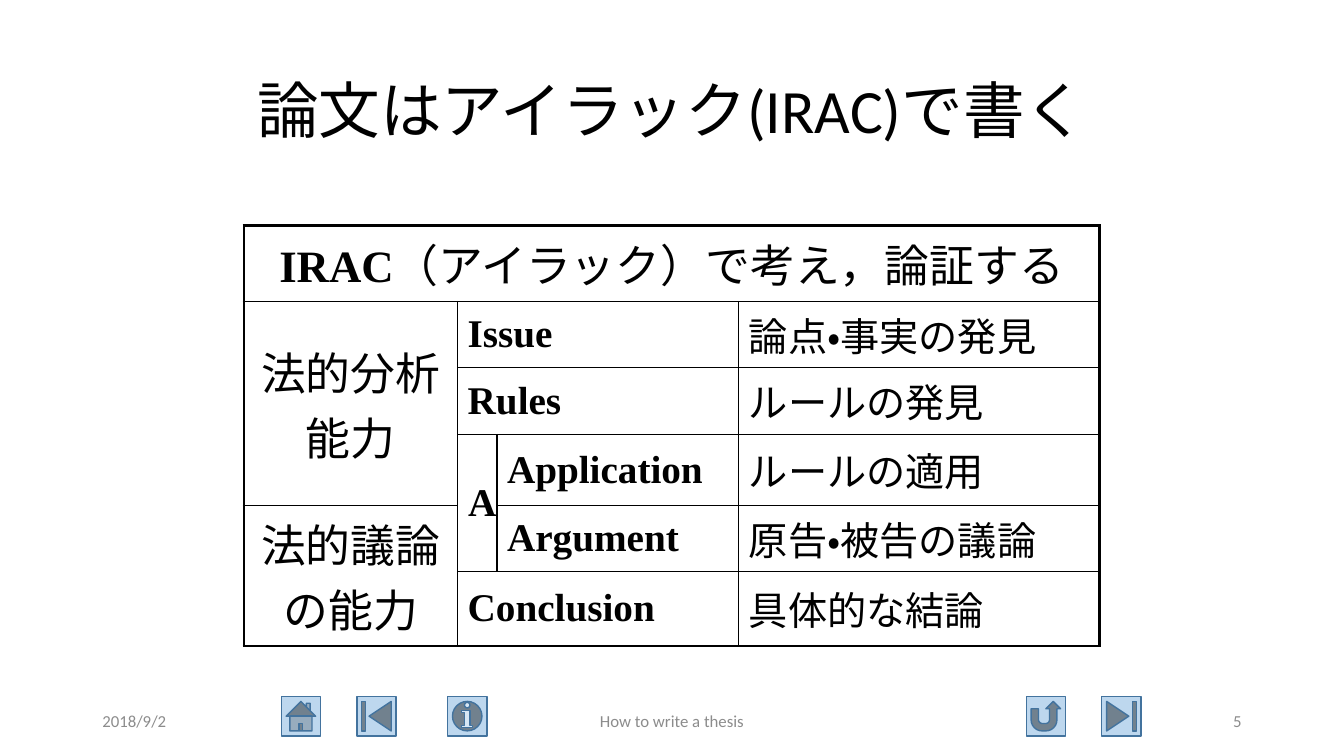
from pptx import Presentation
from pptx.dml.color import RGBColor
from pptx.enum import dml, lang, shapes, text
from pptx.oxml import parse_xml
from pptx.oxml.ns import nsdecls
from pptx.util import Pt

TITLE = "論文はアイラック(IRAC)で書く"
SERIF, SANS, HEADING = "Times New Roman", "Lato", "Calibri"
LEFT, CENTER, RIGHT = text.PP_ALIGN.LEFT, text.PP_ALIGN.CENTER, text.PP_ALIGN.RIGHT

BUTTONS = [
    ("HOME", 200.9),
    ("BEGINNING", 254.9),
    ("RETURN", 733),
    ("END", 787),
    ("INFORMATION", 319.7),
]
FOOTERS = [
    ("2018/9/2", 66, 216, LEFT),
    ("How to write a thesis", 318, 324, CENTER),
    ("5", 678, 216, RIGHT),
]

COLUMNS = [152.6, 28.1, 172.8, 257.8]
ROWS = [54.3, 47.1, 47.9, 50.7, 47.1, 53.5]
CELLS = [
    (0, 0, 1, 4, [("IRAC", SERIF), ("（アイラック）で考え，論証する", SANS)], 32, CENTER),
    (1, 0, 3, 1, [("法的分析能力", SANS)], 32, CENTER),
    (4, 0, 2, 1, [("法的議論の能力", SANS)], 32, CENTER),
    (1, 1, 1, 2, [("Issue", SERIF)], 28, LEFT),
    (2, 1, 1, 2, [("Rules", SERIF)], 28, LEFT),
    (3, 1, 2, 1, [("A", SERIF)], 28, CENTER),
    (3, 2, 1, 1, [("Application", SERIF)], 28, LEFT),
    (4, 2, 1, 1, [("Argument", SERIF)], 28, LEFT),
    (5, 1, 1, 2, [("Conclusion", SERIF)], 28, LEFT),
]
MEANINGS = ["論点・事実の発見", "ルールの発見", "ルールの適用", "原告・被告の議論", "具体的な結論"]
CELLS += [(row, 3, 1, 1, [(meaning, SANS)], 28, LEFT) for row, meaning in enumerate(MEANINGS, 1)]


def color(value):
    return RGBColor.from_string(value)


def style(font, size, value):
    font.size = Pt(size)
    font.color.rgb = color(value)


def add_border(cell, side, width):
    cell._tc.get_or_add_tcPr().append(parse_xml(
        f'<a:{side} {nsdecls("a")} w="{Pt(width)}"><a:solidFill>'
        f'<a:srgbClr val="000000"/></a:solidFill></a:{side}>'))


def add_buttons(slide):
    for kind, left in BUTTONS:
        preset = getattr(shapes.MSO_SHAPE, f"ACTION_BUTTON_{kind}")
        button = slide.shapes.add_shape(preset, Pt(left), Pt(497.5), Pt(28.1), Pt(28.1))
        button.shadow.inherit = False
        button.fill.solid()
        button.fill.fore_color.rgb = color("BDD7EE")
        button.line.color.rgb = color("43739E")
        button.line.width = Pt(1)


def add_footers(slide):
    for words, left, width, align in FOOTERS:
        frame = slide.shapes.add_textbox(Pt(left), Pt(500.5), Pt(width), Pt(28.8)).text_frame
        frame.word_wrap = True
        frame.vertical_anchor = text.MSO_ANCHOR.MIDDLE
        footer = frame.paragraphs[0]
        footer.text = words
        footer.alignment = align
        footer.font.name = HEADING
        style(footer.font, 12, "8C8C8C")


def format_title(title):
    title.left, title.top, title.width, title.height = Pt(66), Pt(28.8), Pt(828), Pt(104.4)
    title.text_frame.vertical_anchor = text.MSO_ANCHOR.MIDDLE
    heading = title.text_frame.paragraphs[0]
    heading.text = TITLE
    heading.alignment = CENTER
    heading.line_spacing = 0.9
    heading.font.name = HEADING
    style(heading.font, 44, "000000")
    heading.runs[0].font.language_id = lang.MSO_LANGUAGE_ID.JAPANESE


def fill_cell(table, row, column, height, width, parts, size, align):
    cell = table.cell(row, column)
    if height * width > 1:
        cell.merge(table.cell(row + height - 1, column + width - 1))
    cell.vertical_anchor = text.MSO_ANCHOR.MIDDLE
    if sum(COLUMNS[column:column + width]) < 30:
        cell.margin_right = 0
    paragraph = cell.text_frame.paragraphs[0]
    paragraph.alignment = align
    style(paragraph.font, size, "000000")
    for words, face in parts:
        run = paragraph.add_run()
        run.text = words
        run.font.name = face
        run.font.bold = face == SERIF
        run.font.language_id = lang.MSO_LANGUAGE_ID.JAPANESE
    edges = [("lnL", column == 0), ("lnR", column + width == len(COLUMNS)),
             ("lnT", row == 0), ("lnB", row + height == len(ROWS))]
    for r in range(row, row + height):
        for c in range(column, column + width):
            part = table.cell(r, c)
            for side, outer in edges:
                add_border(part, side, 2.25 if outer else 1)
            part.fill.background()


def add_irac(slide):
    table = slide.shapes.add_table(len(ROWS), len(COLUMNS), Pt(174.3), Pt(161),
                                   Pt(sum(COLUMNS)), Pt(sum(ROWS))).table
    table.first_row = table.horz_banding = False
    for column, width in zip(table.columns, COLUMNS):
        column.width = Pt(width)
    for row, height in zip(table.rows, ROWS):
        row.height = Pt(height)
    for entry in CELLS:
        fill_cell(table, *entry)


def main():
    deck = Presentation()
    deck.slide_width, deck.slide_height = Pt(960), Pt(540)
    slide = deck.slides.add_slide(deck.slide_layouts[5])
    slide.background.fill.solid()
    slide.background.fill.fore_color.rgb = color("FFFFFF")
    add_buttons(slide)
    format_title(slide.shapes.title)
    add_footers(slide)
    add_irac(slide)
    deck.save("out.pptx")


if __name__ == "__main__":
    main()
